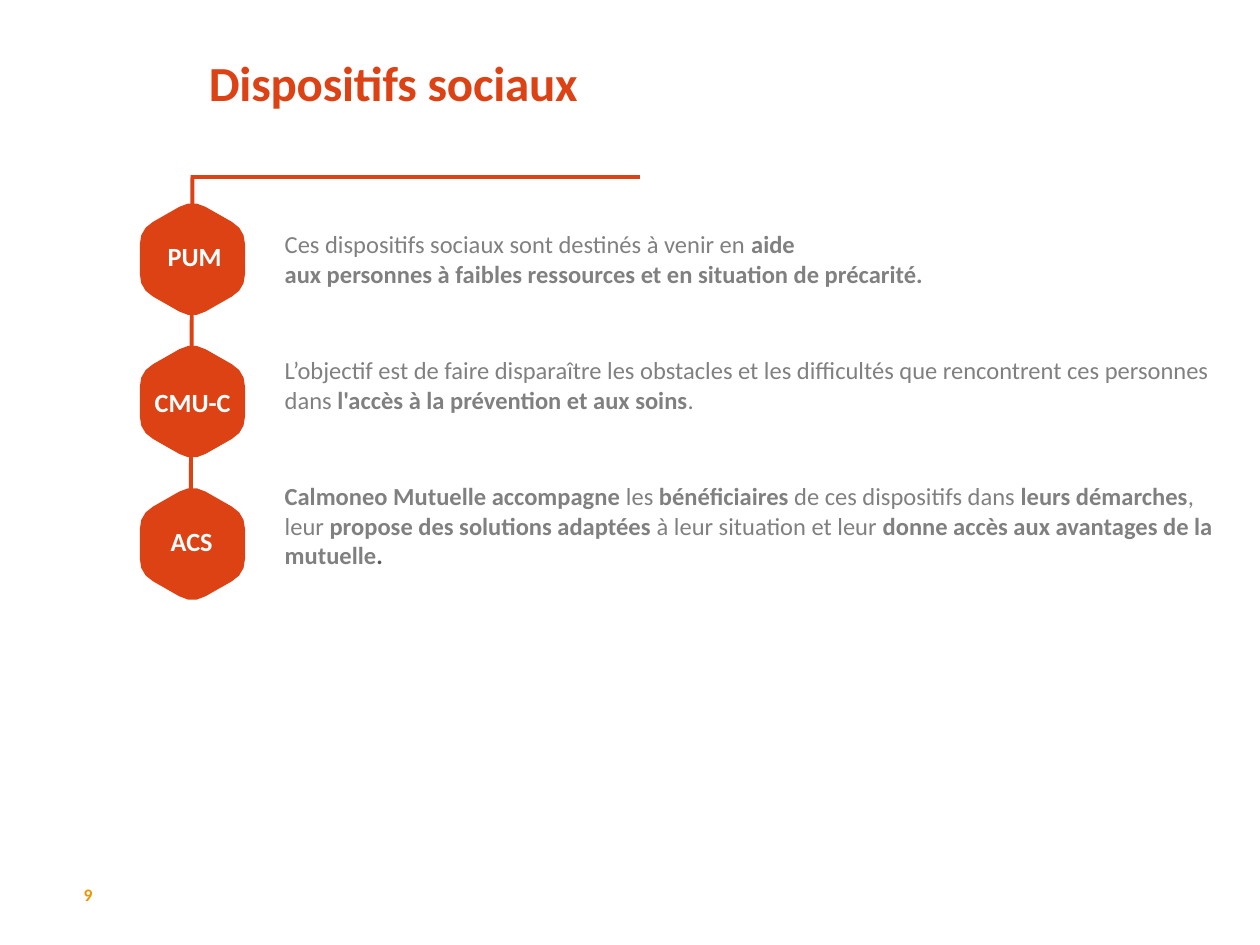
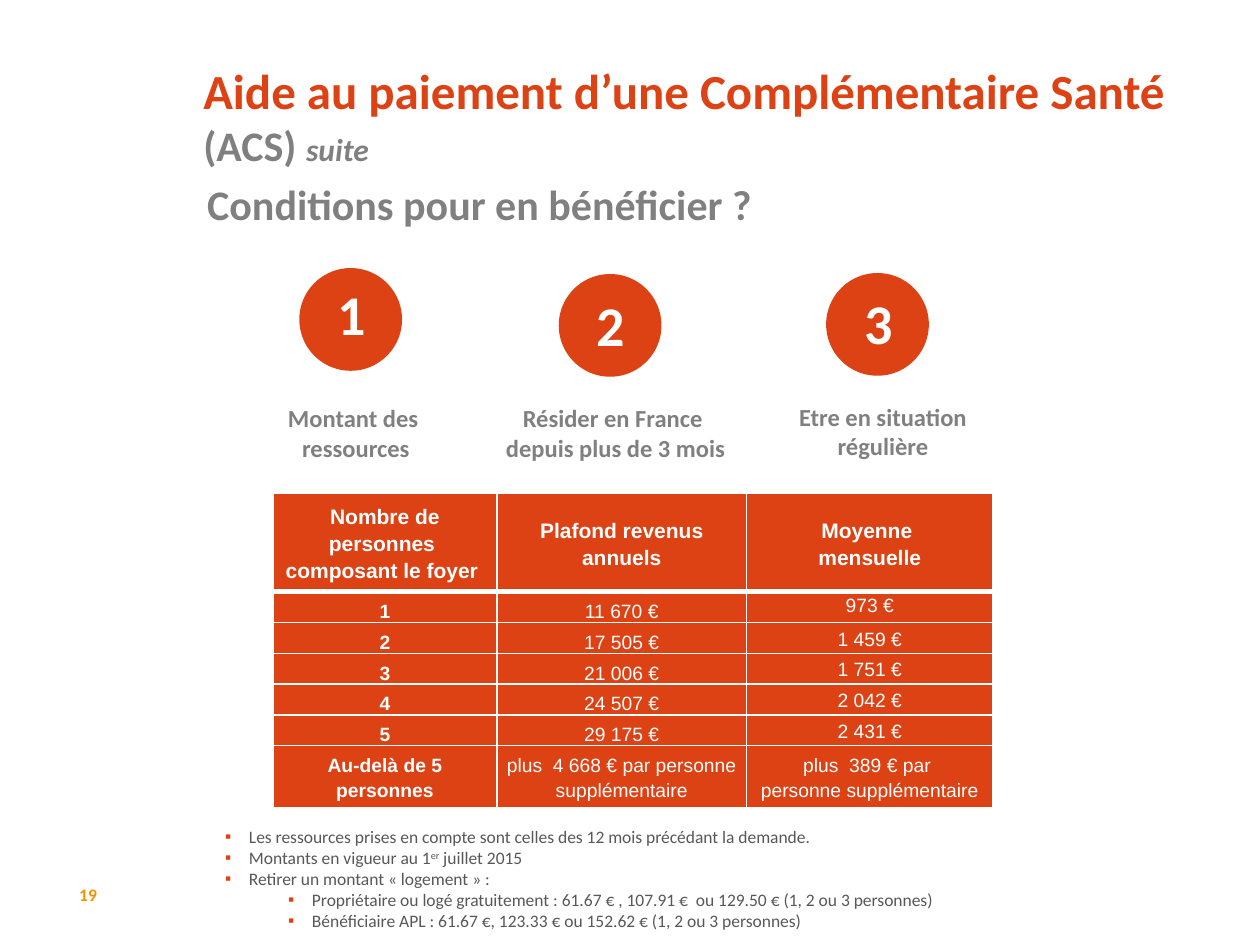
import pptx
import pptx.util
import pptx.dml.color
import pptx.enum.shapes
import pptx.enum.text
import pptx.oxml
import pptx.oxml.ns
from lxml import etree

Cm, Pt = pptx.util.Cm, pptx.util.Pt
ALIGN = pptx.enum.text.PP_ALIGN
ANCHOR = pptx.enum.text.MSO_ANCHOR
SHAPE = pptx.enum.shapes.MSO_SHAPE
LINE = pptx.enum.shapes.MSO_CONNECTOR.STRAIGHT

INK = {"main": "DD4215", "page": "F29400", "gray": "808080",
       "dark": "58585A", "white": "FFFFFF"}
FONT = "Calibri"


# Helpers
def color(name):
    return pptx.dml.color.RGBColor.from_string(INK[name])


def sub(parent, tag, **attrs):
    node = etree.SubElement(parent, pptx.oxml.ns.qn(tag))
    for key, val in attrs.items():
        node.set(key, str(val))
    return node


def write(par, text, size, ink, bold=True, ital=False, font=FONT):
    """Add a run per line of text, with line breaks between."""
    for num, line in enumerate(text.split("\n")):
        if num:
            par.add_line_break()
        run = par.add_run()
        run.text = line
        run.font.name, run.font.size = font, Pt(size)
        run.font.bold, run.font.italic = bold, ital
        run.font.color.rgb = color(ink)
    return run


def setup(frame, anchor=ANCHOR.TOP, align=ALIGN.LEFT, pad=True):
    """Set the margins of a frame and return its first paragraph."""
    frame.word_wrap = True
    frame.auto_size = pptx.enum.text.MSO_AUTO_SIZE.NONE
    frame.vertical_anchor = anchor
    frame.margin_left = frame.margin_right = Cm(0.25 * pad)
    frame.margin_top = frame.margin_bottom = Cm(0.13 * pad)
    frame.paragraphs[0].alignment = align
    return frame.paragraphs[0]


def add_box(slide, left, top, width, height, **opts):
    box = slide.shapes.add_textbox(Cm(left), Cm(top), Cm(width), Cm(height))
    return setup(box.text_frame, **opts)


def add_page(deck, left, top, width, height, number, pad):
    """Add a slide with its title placed and its page number."""
    slide = deck.slides.add_slide(deck.slide_layouts[5])
    title = slide.shapes.title
    title.left, title.top = Cm(left), Cm(top)
    title.width, title.height = Cm(width), Cm(height)
    par = add_box(slide, 1.37, 17.73, 0.81, 0.61,
                  anchor=ANCHOR.MIDDLE, align=ALIGN.CENTER, pad=False)
    write(par, number, 10, "page")
    return slide, setup(title.text_frame, pad=pad)


def add_line(slide, x1, y1, x2, y2):
    line = slide.shapes.add_connector(LINE, Cm(x1), Cm(y1), Cm(x2), Cm(y2))
    line.line.color.rgb = color("main")
    line.line.width = Pt(2.25)
    sub(line._element.spPr, "a:effectLst")


def paint(shape):
    shape.shadow.inherit = False
    shape.fill.solid()
    shape.fill.fore_color.rgb = color("main")


def add_hex(slide, left, top, width, height):
    """Draw a hexagon whose corners are rounded by quadratic curves."""
    tips = [(0.5, 0), (1, 0.25), (1, 0.75), (0.5, 1), (0, 0.75), (0, 0.25)]
    trim, steps = 0.25, 3
    dots = []
    for num, tip in enumerate(tips):
        prev, next_ = tips[num - 1], tips[(num + 1) % 6]
        start = [t + trim * (p - t) for t, p in zip(tip, prev)]
        end = [t + trim * (n - t) for t, n in zip(tip, next_)]
        for step in range(steps + 1):
            u = step / steps
            x, y = [(1 - u) ** 2 * a + 2 * u * (1 - u) * b + u * u * c
                    for a, b, c in zip(start, tip, end)]
            dots.append((Cm(left + x * width), Cm(top + y * height)))
    path = slide.shapes.build_freeform(*dots[0])
    path.add_line_segments(dots[1:], close=True)
    shape = path.convert_to_shape()
    paint(shape)
    shape.line.fill.background()


def add_disc(slide, left, top):
    disc = slide.shapes.add_shape(SHAPE.OVAL, Cm(left), Cm(top), Cm(2), Cm(2))
    paint(disc)
    disc.line.color.rgb = color("main")
    disc.line.width = Pt(2)


def add_label(slide, left, top, width, height, text, size):
    par = add_box(slide, left, top, width, height, align=ALIGN.CENTER)
    write(par, text, size, "white")


def add_edges(cell, top, bottom):
    """Draw white borders on the four sides of a cell."""
    props = cell._tc.get_or_add_tcPr()
    sides = [("L", 1), ("R", 1), ("T", top), ("B", bottom)]
    for pos, (side, width) in enumerate(sides):
        edge = pptx.oxml.parse_xml(
            f'<a:ln{side} {pptx.oxml.ns.nsdecls("a")} w="{Pt(width)}"/>')
        sub(sub(edge, "a:solidFill"), "a:srgbClr", val=INK["white"])
        props.insert(pos, edge)


def add_grid(slide, left, top, widths, heights, rows):
    frame = slide.shapes.add_table(len(rows), len(widths), Cm(left), Cm(top),
                                   Cm(sum(widths)), Cm(sum(heights)))
    grid = frame.table
    for col, width in zip(grid.columns, widths):
        col.width = Cm(width)
    for row, height in zip(grid.rows, heights):
        row.height = Cm(height)
    last = len(rows) - 1
    for i, row in enumerate(rows):
        for j, text in enumerate(row):
            cell = grid.cell(i, j)
            cell.fill.solid()
            cell.fill.fore_color.rgb = color("main")
            add_edges(cell, 3 if i == 1 else 1, 3 if i == 0 else 1)
            cell.margin_left = cell.margin_right = Cm(0.13)
            cell.margin_top = cell.margin_bottom = 0
            cell.vertical_anchor = ANCHOR.MIDDLE
            if 0 < i < last and j < 2:
                cell.vertical_anchor = ANCHOR.BOTTOM
            elif (i, j) == (1, 2):
                cell.vertical_anchor = ANCHOR.TOP
            par = cell.text_frame.paragraphs[0]
            par.alignment, par.line_spacing = ALIGN.CENTER, 1.15
            write(par, text, 11 if i else 12, "white",
                  bold=i == 0 or j == 0, font="Arial")


def add_bullet(par, level):
    par.level = level
    props = par._p.get_or_add_pPr()
    props.set("marL", str(Cm(0.48 + 1.27 * level)))
    props.set("indent", str(-Cm(0.48)))
    sub(sub(props, "a:buClr"), "a:srgbClr", val=INK["main"])
    sub(props, "a:buFont", typeface="Arial")
    sub(props, "a:buChar", char="▪")


# Slide content
BADGES = [  # label left, top, width, height, text
    (2.82, 4.72, 2.21, 1.27, "PUM"),
    (2.64, 7.65, 2.49, 1.8, "CMU-C"),
    (2.95, 10.46, 1.83, 1.98, "ACS"),
]
AIMS = [
    [("Ces dispositifs sociaux sont destinés à venir en ", False),
     ("aide \naux personnes à faibles ressources et en situation de précarité.", True)],
    [("L’objectif est de faire disparaître les obstacles et les difficultés "
      "que rencontrent ces personnes dans ", False),
     ("l'accès à la prévention et aux soins", True), (".", False)],
    [("Calmoneo Mutuelle accompagne", True), (" les ", False),
     ("bénéficiaires ", True), ("de ces dispositifs dans ", False),
     ("leurs démarches", True), (", leur ", False),
     ("propose des solutions adaptées", True),
     (" à leur situation et leur ", False),
     ("donne accès aux avantages de la mutuelle", True)],
]
TERMS = [  # disc left and top, digit top, caption left, top and width, caption
    (6.07, 5.44, 5.51, 4.9, 8, 4.39, "Montant des \nressources"),
    (11.3, 5.56, 5.72, 9.55, 8, 5.56, "Résider en France \ndepuis plus de 3 mois"),
    (16.69, 5.54, 5.69, 14.94, 7.97, 5.56, "Etre en situation\nrégulière"),
]
LIMITS = [
    ("Nombre de personnes \ncomposant le foyer ", "Plafond revenus\nannuels",
     "Moyenne \nmensuelle"),
    ("1", "11 670 €", "973 €"),
    ("2", "17 505 €", "1 459 €"),
    ("3", "21 006 €", "1 751 €"),
    ("4", "24 507 €", "2 042 €"),
    ("5", "29 175 €", "2 431 €"),
    ("Au-delà de 5 personnes", "plus  4 668 € par personne supplémentaire",
     "plus  389 € par \npersonne supplémentaire"),
]
NOTES = [  # level, runs; odd runs are raised
    (0, ["Les ressources prises en compte sont celles des 12 mois précédant la demande."]),
    (0, ["Montants en vigueur au 1", "er", " juillet 2015"]),
    (0, ["Retirer un montant « logement » :"]),
    (1, ["Propriétaire ou logé gratuitement : 61.67 € , 107.91 €  ou 129.50 € "
         "(1, 2 ou 3 personnes)"]),
    (1, ["Bénéficiaire APL : 61.67 €, 123.33 € ou 152.62 € (1, 2 ou 3 personnes)"]),
]


def add_social(deck):
    slide, title = add_page(deck, 3.96, 0.92, 8.26, 1.45, "9", True)
    run = write(title, "Dispositifs sociaux", 28, "main")
    run._r.get_or_add_rPr().set("spc", "-10")

    # Badges and spine
    for num in range(len(BADGES)):
        add_hex(slide, 2.82, 4.02 + 2.87 * num, 2.12, 2.41)
    add_line(slide, 3.88, 3.53, 3.84, 11.15)
    add_line(slide, 3.86, 3.57, 12.9, 3.57)
    for badge in BADGES:
        add_label(slide, *badge, 15)

    # Aims
    par = add_box(slide, 5.74, 4.62, 18.92, 9.45, pad=False)
    frame = par._parent
    for num, parts in enumerate(AIMS):
        if num:
            par = frame.add_paragraph()
            par.space_before = Pt(38.4)
        for text, bold in parts:
            write(par, text, 14, "gray", bold)
    write(par, ".", 14, "dark")


def add_terms(deck):
    slide, title = add_page(deck, 4.1, 1.22, 20.4, 1.52, "19", False)
    write(title, "Aide au paiement d’une Complémentaire Santé ", 28, "main")
    write(title, "(ACS) ", 24, "gray")
    write(title, "suite", 18, "gray", ital=True)

    # Question
    band = slide.shapes.add_shape(SHAPE.ROUNDED_RECTANGLE, Cm(3.86), Cm(3.4),
                                  Cm(12.83), Cm(1.4))
    band.shadow.inherit = False
    band.fill.background()
    band.line.fill.background()
    par = setup(band.text_frame, ANCHOR.MIDDLE)
    write(par, "Conditions pour en bénéficier ?", 24, "gray")

    # Numbered terms
    for num, (x, y, high, left, top, width, text) in enumerate(TERMS, 1):
        add_disc(slide, x, y)
        add_label(slide, x + 0.05, high, 1.93, 1.63, str(num), 32)
        par = add_box(slide, left, top, width, 1.45, align=ALIGN.CENTER)
        par._p.get_or_add_pPr().set("marL", str(Cm(0.16)))
        write(par, text, 14, "gray")

    # Income limits
    add_grid(slide, 5.5, 9.95, [4.52, 5.03, 4.97],
             [1.98] + [0.62] * 5 + [1.25], LIMITS)

    # Notes
    par = add_box(slide, 4.29, 16.52, 15.82, 2.5)
    frame = par._parent
    for num, (level, parts) in enumerate(NOTES):
        if num:
            par = frame.add_paragraph()
        add_bullet(par, level)
        for pos, text in enumerate(parts):
            run = write(par, text, 10, "dark", bold=False)
            if pos % 2:
                run._r.get_or_add_rPr().set("baseline", "30000")


def main():
    deck = pptx.Presentation()
    deck.slide_width, deck.slide_height = Cm(25.4), Cm(19.05)
    add_social(deck)
    add_terms(deck)
    deck.save("out.pptx")


if __name__ == "__main__":
    main()
